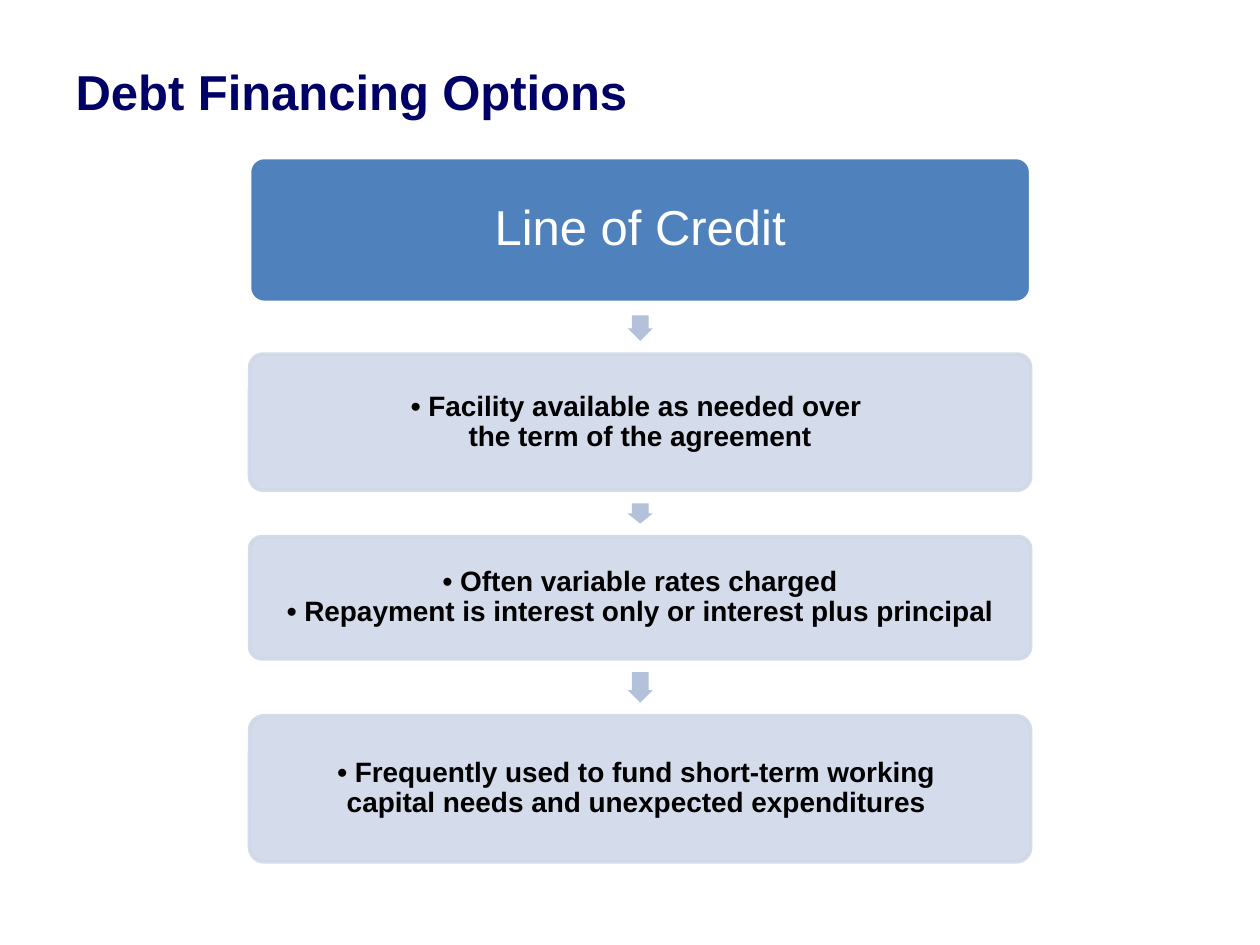
from pptx import Presentation
from pptx.dml.color import RGBColor
from pptx.enum import shapes, text
from pptx.oxml import ns, xmlchemy
from pptx.util import Pt

COLORS = {
    "title": "000066", "header": "4F81BD", "white": "FFFFFF",
    "step": "D0D8E8", "arrow": "B3C1DB", "black": "000000",
}
TITLE_FONT = {"name": "Arial", "size": Pt(28), "bold": True}
HEADER_FONT = {"name": "Arial", "size": Pt(28), "bold": False}
STEP_FONT = {"name": "Arial", "size": Pt(16), "bold": True}

# Top and height of each box, then its paragraphs (\v is a line break)
STEPS = [
    (90, 82.8, ["Line of Credit"]),
    (202.3, 77.8, ["• Facility available as needed over \vthe term of the agreement"]),
    (306.7, 69.8, ["• Often variable rates charged",
                   "• Repayment is interest only or interest plus principal"]),
    (409, 83.5, ["• Frequently used to fund short-term working "
                 "\vcapital needs and unexpected expenditures "]),
]
ARROW_GAP = 7.5
ARROW_WIDTH = 14.4


def rgb(name):
    return RGBColor.from_string(COLORS[name])


def format_font(font, values, color):
    for name, value in values.items():
        setattr(font, name, value)
    font.color.rgb = rgb(color)


def set_opacity(shape, percent):
    """Make the solid fill and line of a shape partly transparent."""
    for color in shape._element.spPr.iter(ns.qn("a:srgbClr")):
        alpha = xmlchemy.OxmlElement("a:alpha")
        alpha.set("val", str(percent * 1000))
        color.append(alpha)


def add_title(page, left, top, width, height):
    title = page.shapes.title
    title.left, title.top, title.width, title.height = map(Pt, (left, top, width, height))
    frame = title.text_frame
    frame.text = "Debt Financing Options"
    frame.auto_size = text.MSO_AUTO_SIZE.NONE
    frame.vertical_anchor = text.MSO_ANCHOR.MIDDLE
    para = frame.paragraphs[0]
    para.alignment = text.PP_ALIGN.LEFT
    format_font(para.font, TITLE_FONT, "title")


def add_box(flow, left, top, width, height, lines, is_header):
    box = flow.shapes.add_shape(shapes.MSO_SHAPE.ROUNDED_RECTANGLE,
                                Pt(left), Pt(top), Pt(width), Pt(height))
    box.adjustments[0] = 0.1
    box.shadow.inherit = False
    box.fill.solid()
    box.fill.fore_color.rgb = rgb("header" if is_header else "step")
    box.line.color.rgb = rgb("white" if is_header else "step")
    box.line.width = Pt(2)
    if not is_header:
        set_opacity(box, 90)

    frame = box.text_frame
    frame.word_wrap = True
    frame.vertical_anchor = text.MSO_ANCHOR.MIDDLE
    for side in ("left", "top", "right", "bottom"):
        setattr(frame, f"margin_{side}", Pt(3))
    frame.text = "\n".join(lines)
    for para in frame.paragraphs:
        para.alignment = text.PP_ALIGN.CENTER
        para.line_spacing = 0.9
        for span in para.runs:
            if is_header:
                format_font(span.font, HEADER_FONT, "white")
            else:
                format_font(span.font, STEP_FONT, "black")


def add_arrow(flow, center, top, bottom):
    """Point downwards between two heights: a right arrow turned about its middle."""
    length = bottom - top
    middle = (top + bottom) / 2
    arrow = flow.shapes.add_shape(
        shapes.MSO_SHAPE.RIGHT_ARROW, Pt(center - length / 2),
        Pt(middle - ARROW_WIDTH / 2), Pt(length), Pt(ARROW_WIDTH))
    arrow.rotation = 90
    arrow.adjustments[0] = 0.667
    arrow.shadow.inherit = False
    arrow.fill.solid()
    arrow.fill.fore_color.rgb = rgb("arrow")
    arrow.line.fill.background()


def add_flow(page, left, width):
    flow = page.shapes.add_group_shape()
    previous_bottom = None
    for top, height, lines in STEPS:
        is_header = previous_bottom is None
        if not is_header:
            add_arrow(flow, left + width / 2, previous_bottom + ARROW_GAP, top - ARROW_GAP)
        add_box(flow, left, top, width, height, lines, is_header)
        previous_bottom = top + height


def main():
    deck = Presentation()
    deck.slide_width, deck.slide_height = Pt(720), Pt(540)
    page = deck.slides.add_slide(deck.slide_layouts[5])
    add_title(page, 36, 32.4, 456, 39.6)
    add_flow(page, 142.6, 446.4)
    deck.save("out.pptx")


if __name__ == "__main__":
    main()
